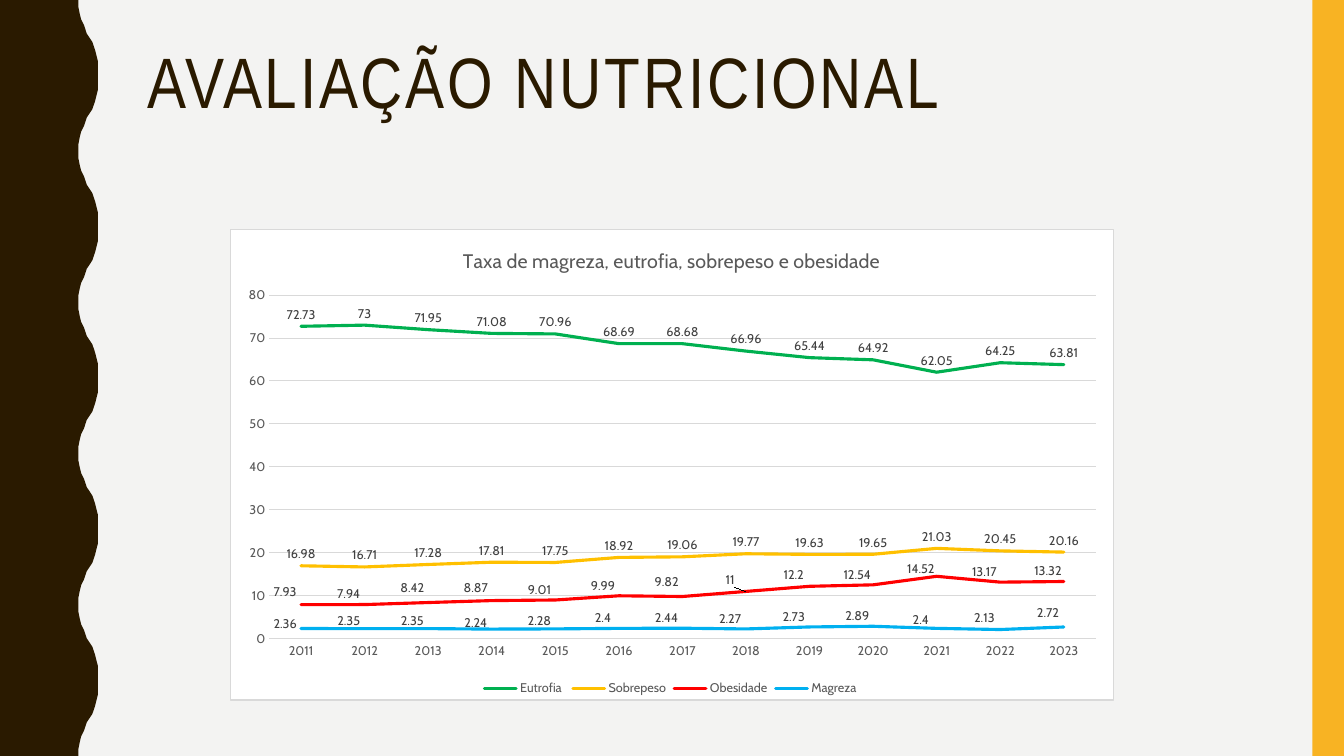
from lxml.etree import SubElement
from pptx import Presentation
from pptx.chart.data import CategoryChartData
from pptx.dml.color import RGBColor
from pptx.enum.chart import XL_CHART_TYPE, XL_LABEL_POSITION, XL_LEGEND_POSITION, XL_TICK_MARK
from pptx.enum.shapes import MSO_SHAPE
from pptx.enum.text import MSO_ANCHOR
from pptx.oxml import parse_xml
from pptx.oxml.ns import nsdecls, qn
from pptx.util import Pt

WIDTH, HEIGHT = 960, 540
HALF_WAVE = 54
WAVE_PROFILE = [
    (0, 56.2), (5, 56.4), (10, 56.9), (14.4, 57.7), (18, 59.5), (21, 61), (24, 62.5),
    (27, 64), (30, 65.5), (33, 67), (36, 68.3), (39.6, 69.2), (44, 69.7), (49, 70), (54, 70),
]
YEARS = [str(year) for year in range(2011, 2024)]
LABEL_SHIFT_X = -0.018
RATES = [
    ("Eutrofia ", "00B050",
     [72.73, 73, 71.95, 71.08, 70.96, 68.69, 68.68, 66.96, 65.44, 64.92, 62.05, 64.25, 63.81], []),
    ("Sobrepeso", "FFC000",
     [16.98, 16.71, 17.28, 17.81, 17.75, 18.92, 19.06, 19.77, 19.63, 19.65, 21.03, 20.45, 20.16], []),
    ("Obesidade", "FF0000",
     [7.93, 7.94, 8.42, 8.87, 9.01, 9.99, 9.82, 11, 12.2, 12.54, 14.52, 13.17, 13.32],
     [-1, 1, -2, -1, 1, 1, -2, 0, 0, 1, 3, 1, 1]),
    ("Magreza ", "00B0F0",
     [2.36, 2.35, 2.35, 2.24, 2.28, 2.4, 2.44, 2.27, 2.73, 2.89, 2.4, 2.13, 2.72],
     [5, 3, 3, 4, 3, 1, 1, 1, 1, 1, 2, 0, -2]),
]


def color(value):
    return RGBColor.from_string(value)


def format_font(font, size, fill, name):
    font.size = Pt(size)
    font.name = name
    font.bold = False
    font.color.rgb = color(fill)


def write_text(frame, text, *, size, fill, name, spacing=0, line_spacing=None):
    paragraph = frame.paragraphs[0]
    paragraph.line_spacing = line_spacing
    run = paragraph.add_run()
    run.text = text
    format_font(run.font, size, fill, name)
    if spacing:
        run.font._element.set("spc", str(spacing * 100))


def add_layout(parent, index, **values):
    layout = parse_xml(f'<c:layout {nsdecls("c")}><c:manualLayout/></c:layout>')
    for tag, value in values.items():
        SubElement(layout[0], qn(f"c:{tag}")).set("val", str(value))
    for old in parent.findall(qn("c:layout")):
        parent.remove(old)
    parent.insert(index, layout)


class SlideBuilder:
    heading_font = "Arial Narrow"
    body_font = "Cabin"
    dark, accent, background = "2A1A00", "F8B323", "F3F3F2"
    gray, label_gray, rule = "595959", "404040", "D9D9D9"

    def __init__(self, presentation):
        self.slide = presentation.slides.add_slide(presentation.slide_layouts[6])
        fill = self.slide.background.fill
        fill.solid()
        fill.fore_color.rgb = color(self.background)

    def paint(self, shape, fill):
        shape.shadow.inherit = False
        shape.fill.solid()
        shape.fill.fore_color.rgb = color(fill)
        shape.line.fill.background()

    def wavy_band(self):
        points = []
        for half in range(HEIGHT // HALF_WAVE):
            top = half * HALF_WAVE
            if half % 2:
                points += [(x, top + HALF_WAVE - y) for y, x in reversed(WAVE_PROFILE)]
            else:
                points += [(x, top + y) for y, x in WAVE_PROFILE]
        builder = self.slide.shapes.build_freeform(0, 0, scale=Pt(1))
        builder.add_line_segments(points + [(0, HEIGHT)], close=True)
        self.paint(builder.convert_to_shape(), self.dark)

    def rectangle(self, left, top, width, height, fill):
        shape = self.slide.shapes.add_shape(
            MSO_SHAPE.RECTANGLE, Pt(left), Pt(top), Pt(width), Pt(height))
        self.paint(shape, fill)

    def title(self, text, left, top, width, height):
        frame = self.slide.shapes.add_textbox(Pt(left), Pt(top), Pt(width), Pt(height)).text_frame
        frame.word_wrap = True
        frame.vertical_anchor = MSO_ANCHOR.TOP
        write_text(frame, text, size=51, fill=self.dark, name=self.heading_font,
                   spacing=2, line_spacing=0.9)

    def line_chart(self, title, left, top, width, height):
        data = CategoryChartData()
        data.categories = YEARS
        for name, _, values, _ in RATES:
            data.add_series(name, values)
        chart = self.slide.shapes.add_chart(
            XL_CHART_TYPE.LINE, Pt(left), Pt(top), Pt(width), Pt(height), data).chart
        format_font(chart.font, 10, "000000", self.body_font)
        write_text(chart.chart_title.text_frame, title, size=14, fill=self.gray, name=self.body_font)
        chart.chart_title.include_in_layout = False
        chart.has_legend = True
        chart.legend.position = XL_LEGEND_POSITION.BOTTOM
        chart.legend.include_in_layout = False
        format_font(chart.legend.font, 9, self.gray, self.body_font)
        self.axes(chart)
        for series, (_, fill, _, shifts) in zip(chart.plots[0].series, RATES):
            self.series(series, fill, shifts, height)
        plot_area = chart._chartSpace.chart.plotArea
        add_layout(plot_area, 0, layoutTarget="inner", xMode="edge", yMode="edge",
                   x=0.044, y=0.14, w=0.936, h=0.73)
        chart._chartSpace.chart.addnext(parse_xml(
            f'<c:spPr {nsdecls("c", "a")}><a:solidFill><a:srgbClr val="FFFFFF"/></a:solidFill>'
            f'<a:ln w="{Pt(0.75)}"><a:solidFill><a:srgbClr val="{self.rule}"/></a:solidFill></a:ln>'
            '</c:spPr>'))

    def axes(self, chart):
        for axis in (chart.category_axis, chart.value_axis):
            axis.major_tick_mark = axis.minor_tick_mark = XL_TICK_MARK.NONE
            format_font(axis.tick_labels.font, 9, self.gray, self.body_font)
        values = chart.value_axis
        values.minimum_scale, values.maximum_scale, values.major_unit = 0, 80, 10
        values.format.line.fill.background()
        for line in (chart.category_axis.format.line, values.major_gridlines.format.line):
            line.width = Pt(0.75)
            line.color.rgb = color(self.rule)

    def series(self, series, fill, shifts, chart_height):
        series.smooth = False
        series.format.line.width = Pt(2.25)
        series.format.line.color.rgb = color(fill)
        series.format.line._ln.set("cap", "rnd")
        self.labels(series.data_labels)
        series.data_labels.show_value = True
        for index, shift in enumerate(shifts):
            self.labels(series.points[index].data_label)
            label = series._element.xpath(f'c:dLbls/c:dLbl[c:idx/@val="{index}"]')[0]
            add_layout(label, 1, x=LABEL_SHIFT_X, y=round(shift / chart_height, 4))

    def labels(self, labels):
        labels.position = XL_LABEL_POSITION.ABOVE
        format_font(labels.font, 9, self.label_gray, self.body_font)


def main():
    presentation = Presentation()
    presentation.slide_width, presentation.slide_height = Pt(WIDTH), Pt(HEIGHT)
    builder = SlideBuilder(presentation)
    builder.wavy_band()
    builder.rectangle(937.5, 0, 22.5, HEIGHT, builder.accent)
    builder.title("AVALIAÇÃO NUTRICIONAL", 98.6, 30.2, 801.4, 117.4)
    builder.line_chart("Taxa de magreza, eutrofia, sobrepeso e obesidade", 164.2, 163.4, 631.4, 337)
    presentation.save("out.pptx")


if __name__ == "__main__":
    main()
